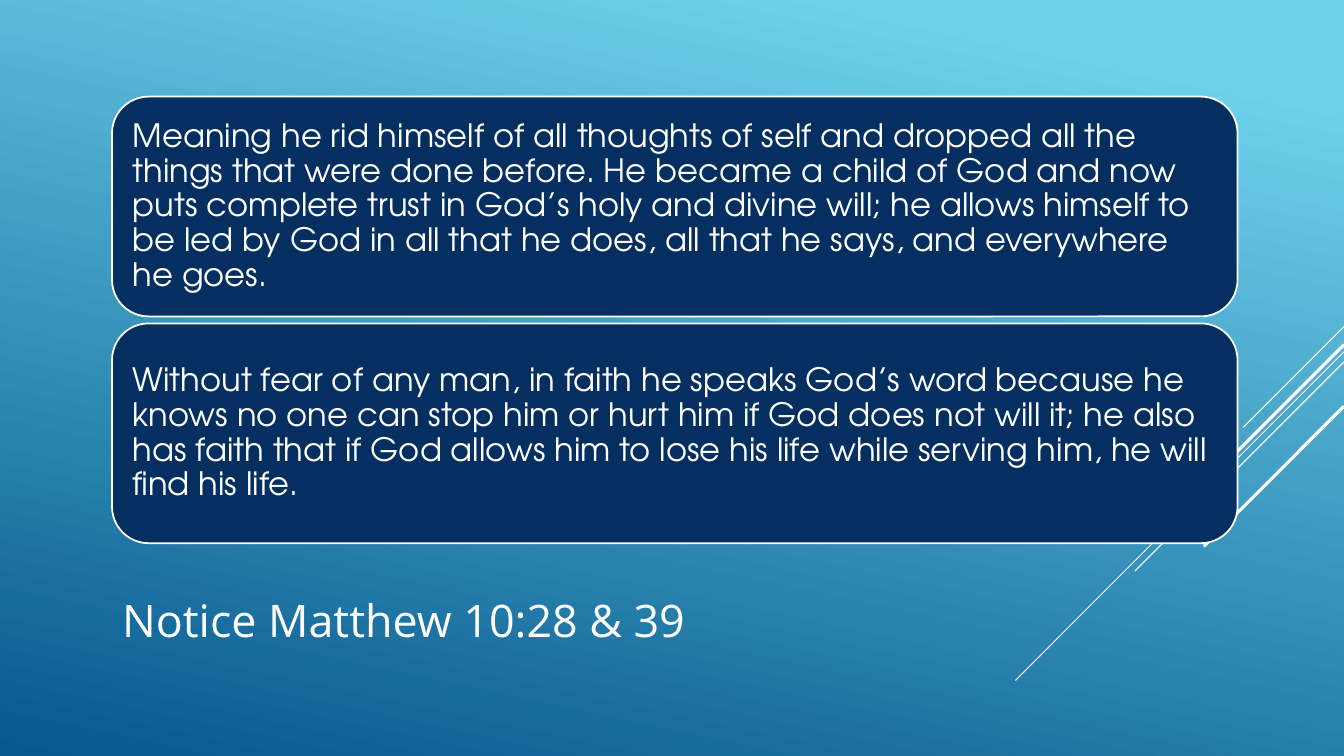
import pptx
import pptx.dml.color
import pptx.enum.shapes
import pptx.enum.text
import pptx.oxml
import pptx.oxml.ns
import pptx.util

Pt = pptx.util.Pt
WIDTH, HEIGHT = 960, 540
WHITE = "FFFFFF"
NAVY = "052F61"

# Diagonals from the right edge: start height, horizontal run, line width
DIAGONALS = [
    (233.3, 72, 0.75),
    (251.3, 234.7, 0.75),
    (258.5, 149.3, 0.75),
    (246.2, 137.5, 2.25),
    (290.2, 100.1, 2.25),
]

STATEMENTS = [
    "Meaning he rid himself of all thoughts of self and dropped all the things "
    "that were done before. He became a child of God and now puts complete trust "
    "in God’s holy and divine will; he allows himself to be led by God in all "
    "that he does, all that he says, and everywhere he goes.",
    "Without fear of any man, in faith he speaks God’s word because he knows no "
    "one can stop him or hurt him if God does not will it; he also has faith that "
    "if God allows him to lose his life while serving him, he will find his life.",
]


def rgb(color):
    return pptx.dml.color.RGBColor.from_string(color)


def write(tf, text, font, size, spacing, margins):
    tf.word_wrap = True
    tf.vertical_anchor = pptx.enum.text.MSO_ANCHOR.MIDDLE
    tf.margin_left = tf.margin_right = Pt(margins[0])
    tf.margin_top = tf.margin_bottom = Pt(margins[1])
    tf.text = text
    p = tf.paragraphs[0]
    p.alignment = pptx.enum.text.PP_ALIGN.LEFT
    p.line_spacing = spacing
    r = p.runs[0]
    r.font.name = font
    r.font.size = Pt(size)
    r.font.color.rgb = rgb(WHITE)


def paint_background(s):
    fill = s.background.fill
    fill.gradient()
    fill.gradient_angle = 258
    for stop, (position, color) in zip(
        fill.gradient_stops, [(0.1, "6ED2EB"), (1, "06588E")]
    ):
        stop.position = position
        stop.color.rgb = rgb(color)


def add_diagonals(s, right):
    for top, run, weight in DIAGONALS:
        line = s.shapes.add_connector(
            pptx.enum.shapes.MSO_CONNECTOR.STRAIGHT,
            Pt(right), Pt(top), Pt(right - run), Pt(top + run),
        )
        line.line.color.rgb = rgb(WHITE)
        line.line.width = Pt(weight)
        # An empty effect list removes the theme shadow
        sp_pr = line._element.spPr
        sp_pr.append(pptx.oxml.parse_xml(
            "<a:effectLst %s/>" % pptx.oxml.ns.nsdecls("a")))


def add_title(s, left, top, width, height):
    title = s.shapes.title
    title.left, title.top = Pt(left), Pt(top)
    title.width, title.height = Pt(width), Pt(height)
    write(title.text_frame, "Notice Matthew 10:28 & 39", "Open Sans", 32, 1.07,
          (7.2, 3.6))


def add_statements(s, left, top, width, height, gap=5):
    card_height = (height - gap * (len(STATEMENTS) - 1)) / len(STATEMENTS)
    for i, text in enumerate(STATEMENTS):
        sp = s.shapes.add_shape(
            pptx.enum.shapes.MSO_SHAPE.ROUNDED_RECTANGLE,
            Pt(left), Pt(top + i * (card_height + gap)),
            Pt(width), Pt(card_height),
        )
        sp.shadow.inherit = False
        sp.fill.solid()
        sp.fill.fore_color.rgb = rgb(NAVY)
        sp.line.color.rgb = rgb(WHITE)
        sp.line.width = Pt(1.25)
        write(sp.text_frame, text, "TeX Gyre Adventor", 23, 0.9, (7.2, 7.2))


def main():
    prs = pptx.Presentation()
    prs.slide_width, prs.slide_height = Pt(WIDTH), Pt(HEIGHT)
    s = prs.slides.add_slide(prs.slide_layouts.get_by_name("Title Only"))
    paint_background(s)
    add_diagonals(s, WIDTH)
    add_title(s, 80, 417.6, 481, 46.8)
    add_statements(s, 80, 69, 804, 319)
    prs.save("out.pptx")


if __name__ == "__main__":
    main()
